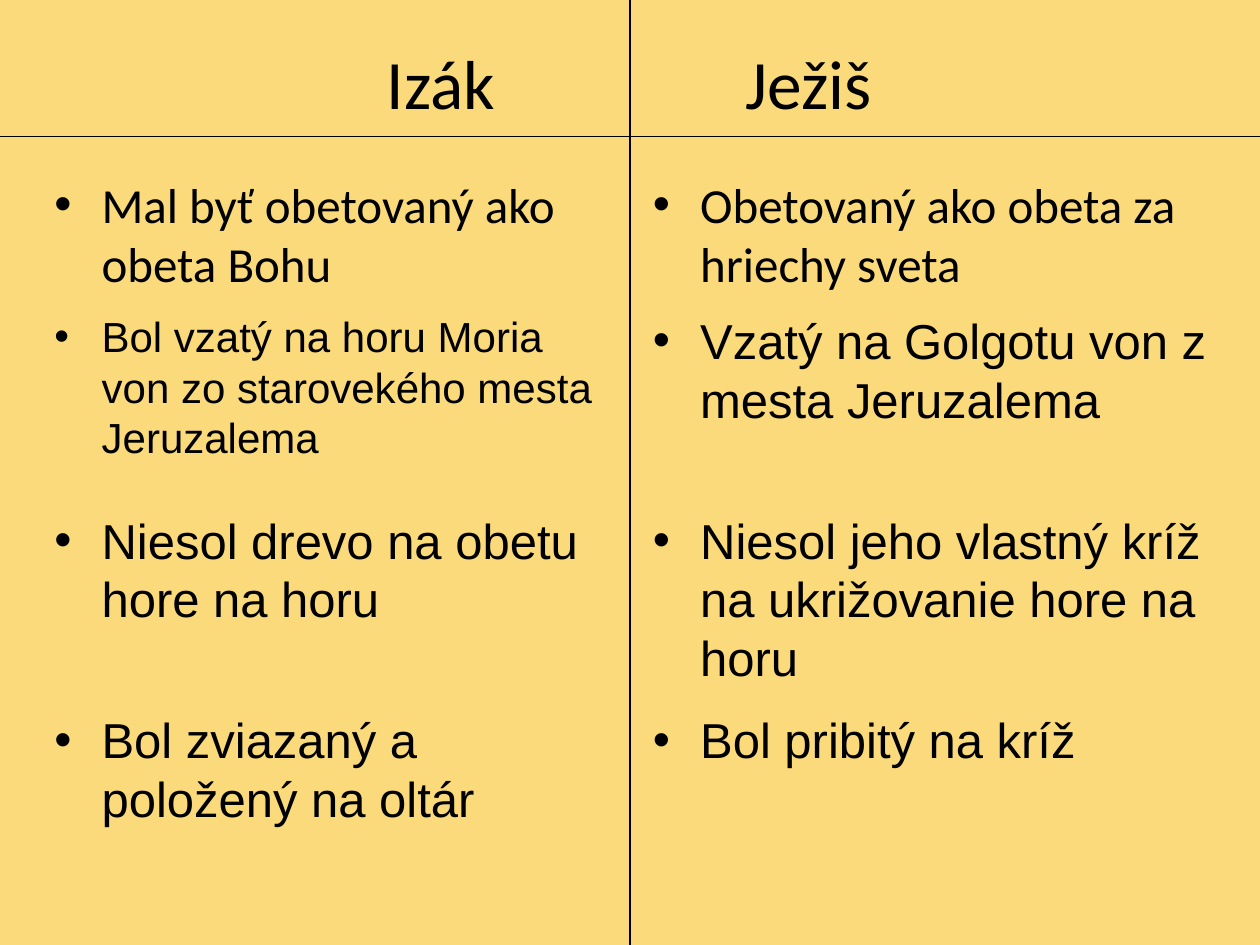
"""Build a slide comparing Izák and Ježiš in two columns."""
from lxml.etree import SubElement
from pptx import Presentation
from pptx.dml.color import RGBColor
from pptx.enum.shapes import MSO_CONNECTOR
from pptx.enum.text import MSO_ANCHOR, PP_ALIGN
from pptx.oxml.ns import qn
from pptx.util import Pt


def color(hex_code):
    return RGBColor.from_string(hex_code)


def add_text(text, left, top, width, height, size=28, font="Arial",
             align=PP_ALIGN.LEFT, anchor=MSO_ANCHOR.TOP, bullet=False):
    frame = slide.shapes.add_textbox(Pt(left), Pt(top), Pt(width), Pt(height)).text_frame
    frame.word_wrap = True
    frame.vertical_anchor = anchor
    paragraph = frame.paragraphs[0]
    paragraph.alignment = align
    run = paragraph.add_run()
    run.text = text
    run.font.size = Pt(size)
    run.font.name = font
    run.font.color.rgb = color("000000")
    if bullet:
        paragraph.space_before = Pt(2.8)
        properties = paragraph._p.get_or_add_pPr()
        properties.set("marL", str(Pt(27)))
        properties.set("indent", str(-Pt(27)))
        SubElement(properties, qn("a:buFont"), typeface="Arial")
        SubElement(properties, qn("a:buChar"), char="•")


presentation = Presentation()
presentation.slide_width = Pt(720)
presentation.slide_height = Pt(540)
slide = presentation.slides.add_slide(presentation.slide_layouts[6])
slide.background.fill.solid()
slide.background.fill.fore_color.rgb = color("FADA7A")

for name, left in (("Izák", 180), ("Ježiš", 390)):
    add_text(name, left, 21.6, 144, 50.4, size=39.6, font="Calibri",
             align=PP_ALIGN.CENTER, anchor=MSO_ANCHOR.MIDDLE)

for x1, y1, x2, y2 in ((0, 78, 720, 78), (360, 0, 360, 540)):
    divider = slide.shapes.add_connector(MSO_CONNECTOR.STRAIGHT, Pt(x1), Pt(y1), Pt(x2), Pt(y2))
    divider.line.color.rgb = color("000000")
    divider.line.width = Pt(0.75)
    SubElement(divider._element.spPr, qn("a:effectLst"))

comparisons = [
    (96, 78, "Calibri", ("Mal byť obetovaný ako obeta Bohu", 28),
     ("Obetovaný ako obeta za hriechy sveta", 28)),
    (174, 114, "Arial", ("Bol vzatý na horu Moria von zo starovekého mesta Jeruzalema", 24),
     ("Vzatý na Golgotu von z mesta Jeruzalema", 28)),
    (288, 114, "Arial", ("Niesol drevo na obetu hore na horu", 28),
     ("Niesol jeho vlastný kríž na ukrižovanie hore na horu", 28)),
    (402, 78, "Arial", ("Bol zviazaný a položený na oltár", 28),
     ("Bol pribitý na kríž", 28)),
]
columns = ((24, 330), (366, 336))

for top, height, font, *statements in comparisons:
    for (left, width), (statement, size) in zip(columns, statements):
        add_text(statement, left, top, width, height, size=size, font=font, bullet=True)

presentation.save("out.pptx")
